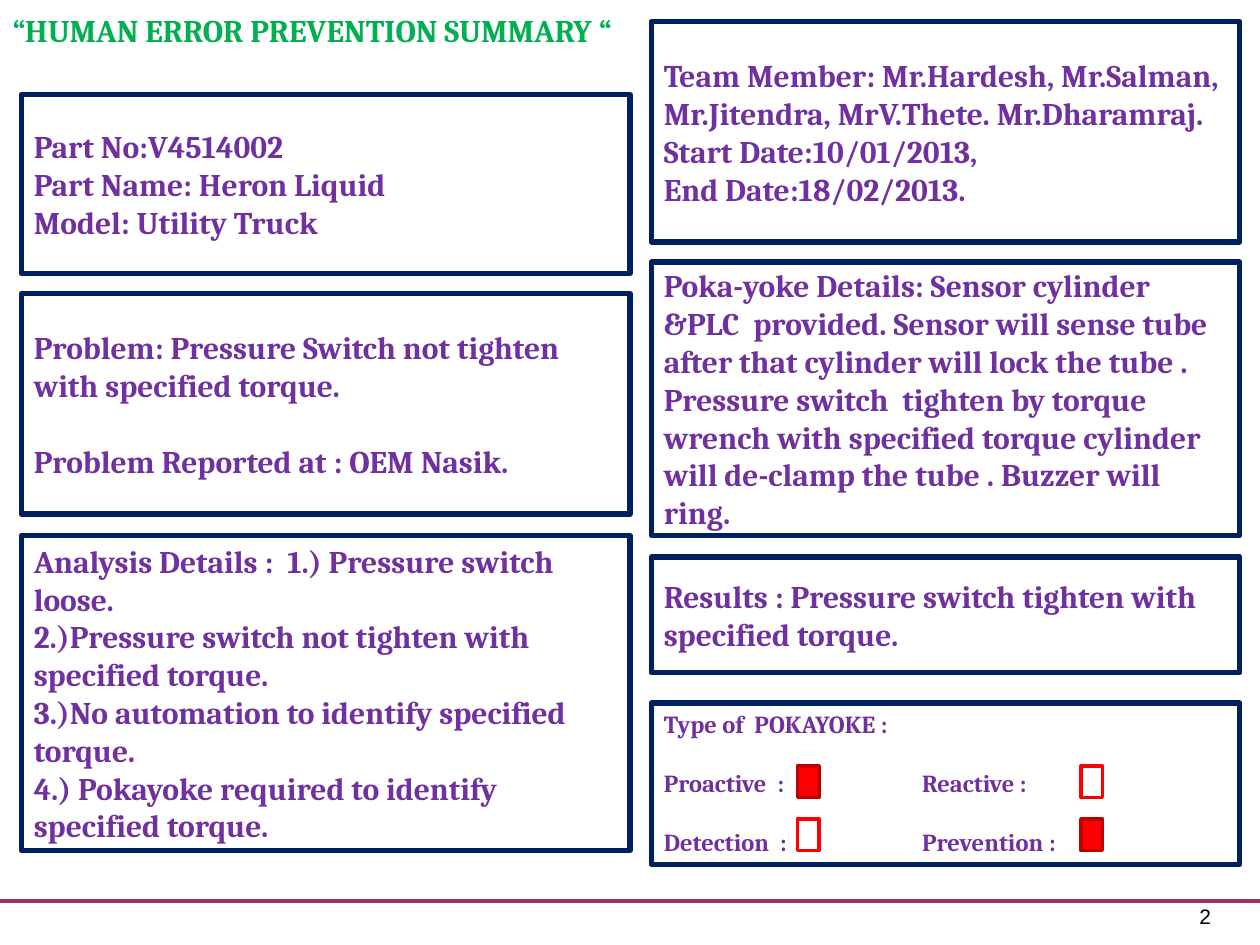
from lxml import etree
from pptx import Presentation
from pptx.dml.color import RGBColor
from pptx.enum.shapes import MSO_CONNECTOR, MSO_SHAPE
from pptx.enum.text import MSO_ANCHOR, MSO_AUTO_SIZE, PP_ALIGN
from pptx.oxml.ns import qn
from pptx.util import Inches, Pt

RECT = MSO_SHAPE.RECTANGLE
STRAIGHT = MSO_CONNECTOR.STRAIGHT
TOP, MIDDLE = MSO_ANCHOR.TOP, MSO_ANCHOR.MIDDLE
LEFT = PP_ALIGN.LEFT
NO_FIT = MSO_AUTO_SIZE.NONE

WHITE = RGBColor(0xFF, 0xFF, 0xFF)
BLACK = RGBColor(0, 0, 0)
NAVY = RGBColor(0x00, 0x20, 0x60)
PURPLE = RGBColor(0x70, 0x30, 0xA0)
GREEN = RGBColor(0x00, 0xB0, 0x50)
RED = RGBColor(0xFF, 0, 0)
DARK_RED = RGBColor(0xC0, 0, 0)
PLUM = RGBColor(0x99, 0x33, 0x66)

LEFT_X, LEFT_W = 0.17, 4.83
RIGHT_X, RIGHT_W = 5.17, 4.67
LINE_PITCH = 1.2

LEFT_PANELS = [
    (0.75, 1.42, ["Part No:V4514002", "Part Name: Heron Liquid", "Model: Utility Truck"]),
    (2.33, 1.75, ["Problem: Pressure Switch not tighten with specified torque.",
                  "Problem Reported at : OEM Nasik."]),
    (4.25, 2.5, ["Analysis Details :  1.) Pressure switch loose.",
                 "2.)Pressure switch not tighten with specified torque.",
                 "3.)No automation to identify specified torque.",
                 "4.) Pokayoke required to identify specified torque."]),
]
RIGHT_PANELS = [
    (0.17, 1.75, ["Team Member: Mr.Hardesh, Mr.Salman, Mr.Jitendra, MrV.Thete. Mr.Dharamraj.",
                  "Start Date:10/01/2013,", "End Date:18/02/2013."]),
    (2.08, 2.17, ["Poka-yoke Details: Sensor cylinder &PLC  provided. Sensor will sense tube "
                  "after that cylinder will lock the tube . Pressure switch  tighten by torque "
                  "wrench with specified torque cylinder will de-clamp the tube . Buzzer will ring."]),
    (4.42, 0.92, ["Results : Pressure switch tighten with specified torque."]),
]
SPACED_START = "Problem Reported"


def format_font(font, size, color, name="Cambria", bold=True):
    """Apply typeface, size, colour and weight to a font."""
    font.name, font.size, font.bold = name, Pt(size), bold
    font.color.rgb = color


def add_box(s, x, y, w, h, fill, line, width):
    """Add an outlined rectangle, hollow when fill is None."""
    sp = s.shapes.add_shape(RECT, Inches(x), Inches(y), Inches(w), Inches(h))
    sp.shadow.inherit = False
    if fill is None:
        sp.fill.background()
    else:
        sp.fill.solid()
        sp.fill.fore_color.rgb = fill
    sp.line.color.rgb = line
    sp.line.width = Pt(width)
    return sp


def add_panel(s, x, y, w, h, lines, size=18, anchor=MIDDLE, spaced=SPACED_START):
    """Add a navy-framed panel, leaving a line free above paragraphs that start with spaced."""
    sp = add_box(s, x, y, w, h, WHITE, NAVY, 3)
    tf = sp.text_frame
    tf.word_wrap = True
    tf.vertical_anchor = anchor
    tf.text = "\n".join(lines)
    for p in tf.paragraphs:
        p.alignment = LEFT
        if p.text.startswith(spaced):
            p.space_before = Pt(size * LINE_PITCH)
        for r in p.runs:
            format_font(r.font, size, PURPLE)
    return sp


def add_type_panel(s, x, y, w, h):
    """Add the poka-yoke type panel with its four check boxes."""
    sp = add_panel(s, x, y, w, h,
                   ["Type of  POKAYOKE :", "Proactive  :\tReactive :", "Detection  :\tPrevention :"],
                   size=14, anchor=TOP, spaced=("Proactive", "Detection"))
    for p in sp.text_frame.paragraphs[1:]:
        tabs = etree.SubElement(p._p.get_or_add_pPr(), qn("a:tabLst"))
        etree.SubElement(tabs, qn("a:tab"), pos=str(Inches(2.05)), algn="l")
    for row, checks in enumerate([(True, False), (False, True)]):
        for col, checked in enumerate(checks):
            add_box(s, x + 1.16 + 2.25 * col, y + 0.5 + 0.42 * row, 0.17, 0.25,
                    RED if checked else None, DARK_RED if checked else RED, 2)


def add_title(s, x, y, w, h):
    """Place and format the slide title."""
    sp = s.shapes.title
    sp.left, sp.top, sp.width, sp.height = Inches(x), Inches(y), Inches(w), Inches(h)
    tf = sp.text_frame
    tf.text = "“HUMAN ERROR PREVENTION SUMMARY “"
    tf.auto_size = NO_FIT
    tf.vertical_anchor = MIDDLE
    p = tf.paragraphs[0]
    p.alignment = LEFT
    format_font(p.runs[0].font, 18, GREEN)


def add_footer(s, x, y, w):
    """Add the footer rule and the page number."""
    rule = s.shapes.add_connector(STRAIGHT, Inches(x), Inches(y), Inches(x + w), Inches(y))
    rule.line.color.rgb = PLUM
    rule.line.width = Pt(2)
    etree.SubElement(rule._element.spPr, qn("a:effectLst"))
    sp = s.shapes.add_textbox(Inches(x + w - 0.58), Inches(y - 0.03), Inches(0.5), Inches(0.3))
    tf = sp.text_frame
    tf.word_wrap = True
    tf.text = "2"
    format_font(tf.paragraphs[0].runs[0].font, 12, BLACK, "Arial", False)


def main():
    """Build the summary slide and save it."""
    prs = Presentation()
    prs.slide_width, prs.slide_height = Inches(10), Inches(7.5)
    s = prs.slides.add_slide(prs.slide_layouts[5])
    add_title(s, 0, 0.04, 10, 0.4)
    add_footer(s, 0, 7.15, 10)
    for x, w, panels in [(LEFT_X, LEFT_W, LEFT_PANELS), (RIGHT_X, RIGHT_W, RIGHT_PANELS)]:
        for y, h, lines in panels:
            add_panel(s, x, y, w, h, lines)
    add_type_panel(s, RIGHT_X, 5.58, RIGHT_W, 1.28)
    prs.save("out.pptx")


if __name__ == "__main__":
    main()
